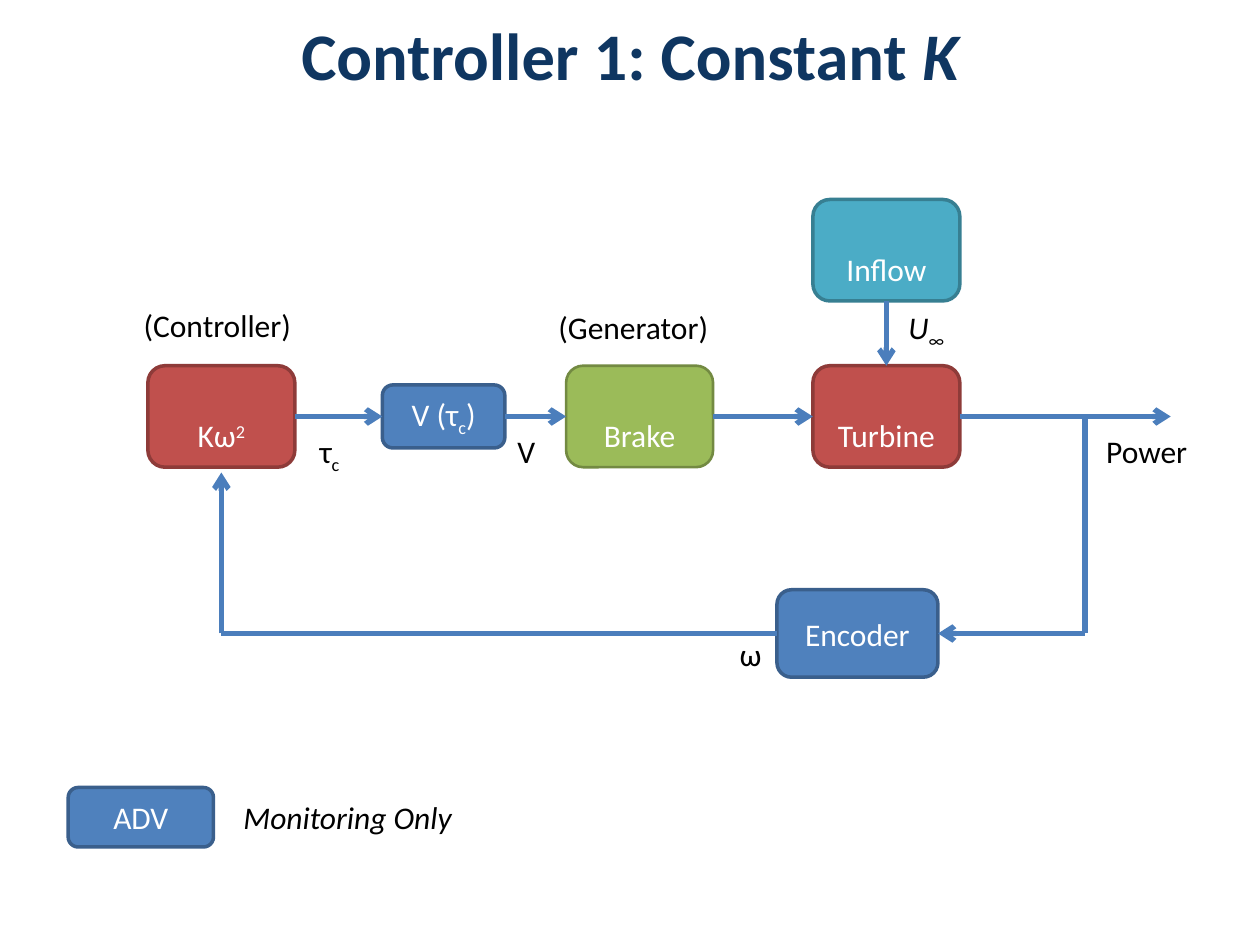
from dataclasses import dataclass

from lxml.etree import SubElement as Sub
from pptx import Presentation
from pptx.dml.color import RGBColor as Rgb
from pptx.enum.shapes import MSO_CONNECTOR as Conn, MSO_SHAPE as Shape
from pptx.enum.text import MSO_ANCHOR as Anchor, MSO_AUTO_SIZE as Fit, PP_ALIGN as Align
from pptx.oxml.ns import qn
from pptx.util import Pt

TOP, LEFT, BOTTOM, RIGHT = range(4)
SHIFT = {"sub": "-25000", "sup": "30000"}


@dataclass(frozen=True)
class Theme:
    """Colours and type sizes; each box tone is a fill and an edge."""
    font: str = "Calibri"
    body: float = 18
    head: float = 38
    navy: str = "0F3661"
    ink: str = "000000"
    pale: str = "FFFFFF"
    wire: str = "4B7EBC"
    red: tuple = ("C0504D", "8E3B39")
    green: tuple = ("9BBB59", "738A42")
    teal: tuple = ("4BACC6", "377F92")
    blue: tuple = ("4F81BD", "3A5F8C")


THEME = Theme()


def write(para, runs, color, size=THEME.body, bold=False):
    """Add (text, style) runs to a paragraph."""
    for text, style in runs:
        run = para.add_run()
        run.text = text
        font = run.font
        font.name, font.size, font.bold = THEME.font, Pt(size), bold
        font.italic = style == "slant"
        font.color.rgb = Rgb.from_string(color)
        if style in SHIFT:
            run._r.get_or_add_rPr().set("baseline", SHIFT[style])


def add_title(slide, runs):
    """Add the heading across the full slide width."""
    frame = slide.shapes.add_textbox(0, Pt(8), Pt(720), Pt(46)).text_frame
    frame.margin_left = frame.margin_right = frame.margin_top = frame.margin_bottom = 0
    frame.word_wrap, frame.auto_size = True, Fit.SHAPE_TO_FIT_TEXT
    para = frame.paragraphs[0]
    para.alignment = Align.CENTER
    write(para, runs, THEME.navy, THEME.head, True)


def add_block(slide, mid, size, tone, runs, lead=None, edge=2):
    """Add a rounded box placed by its centre."""
    (x, y), (w, h) = mid, size
    box = slide.shapes.add_shape(
        Shape.ROUNDED_RECTANGLE, Pt(x - w / 2), Pt(y - h / 2), Pt(w), Pt(h))
    box.shadow.inherit = False
    box.fill.solid()
    box.fill.fore_color.rgb = Rgb.from_string(tone[0])
    box.line.color.rgb = Rgb.from_string(tone[1])
    box.line.width = Pt(edge)
    frame = box.text_frame
    frame.word_wrap, frame.vertical_anchor = True, Anchor.MIDDLE
    para = frame.paragraphs[0]
    para.alignment, para.space_after = Align.CENTER, Pt(10)
    if lead:
        para.line_spacing = lead
    write(para, runs, THEME.pale)
    return box


def add_label(slide, x, y, w, runs, wrap=True, align=Align.LEFT):
    """Add a plain caption."""
    frame = slide.shapes.add_textbox(Pt(x), Pt(y), Pt(w), Pt(29)).text_frame
    frame.word_wrap, frame.auto_size = wrap, Fit.SHAPE_TO_FIT_TEXT
    para = frame.paragraphs[0]
    para.alignment = align
    write(para, runs, THEME.ink)


def add_wire(slide, start, end, arrow=True):
    """Link two ends, each an (x, y) point or a (box, side) joint."""
    wire = slide.shapes.add_connector(Conn.STRAIGHT, 0, 0, 0, 0)
    if isinstance(start[0], (int, float)):
        wire.begin_x, wire.begin_y = map(Pt, start)
    else:
        wire.begin_connect(*start)
    if isinstance(end[0], (int, float)):
        wire.end_x, wire.end_y = map(Pt, end)
    else:
        wire.end_connect(*end)
    wire.line.color.rgb = Rgb.from_string(THEME.wire)
    wire.line.width = Pt(3)
    if arrow:
        Sub(wire.line._get_or_add_ln(), qn("a:tailEnd"), type="arrow")
    Sub(wire._element.spPr, qn("a:effectLst"))


def add_loop(slide):
    """Add the control loop with its boxes and wires."""
    row, back, west, east = 238, 362, 126.5, 620
    big = (84, 58)
    gain = add_block(slide, (west, row), big, THEME.red, [("Kω", ""), ("2", "sup")], 2)
    volt = add_block(slide, (253.5, row), (70, 36), THEME.blue,
                     [("V (τ", ""), ("c", "sub"), (")", "")])
    brake = add_block(slide, (365.5, row), big, THEME.green, [("Brake", "")], 2, 1.5)
    rotor = add_block(slide, (506.5, row), big, THEME.red, [("Turbine", "")], 2)
    flow = add_block(slide, (506.5, 143), big, THEME.teal, [("Inflow", "")], 2)
    coder = add_block(slide, (490, back), (92, 50), THEME.blue, [("Encoder", "")])

    chain = [gain, volt, brake, rotor]
    for one, two in zip(chain, chain[1:]):
        add_wire(slide, (one, RIGHT), (two, LEFT))
    add_wire(slide, (flow, BOTTOM), (rotor, TOP))
    add_wire(slide, (rotor, RIGHT), (669, row))
    add_wire(slide, (east, row), (east, back), False)
    add_wire(slide, (east, back), (coder, RIGHT))
    add_wire(slide, (coder, LEFT), (west, back), False)
    add_wire(slide, (west, back), (west, 270))


def main():
    """Build and save the slide."""
    deck = Presentation()
    deck.slide_width, deck.slide_height = Pt(720), Pt(540)
    slide = deck.slides.add_slide(deck.slide_layouts[6])
    add_title(slide, [("Controller 1: Constant ", ""), ("K", "slant")])
    add_loop(slide)
    add_label(slide, 175.5, 243.5, 42.5, [("τ", ""), ("c", "sub")])
    add_label(slide, 288.5, 243.5, 42.5, [("V", "")])
    add_label(slide, 415.5, 359.5, 42.5, [("ω", "")])
    add_label(slide, 620, 243.5, 70.5, [("Power", "")], align=Align.CENTER)
    add_label(slide, 312, 172.5, 101.5, [("(Generator)", "")], wrap=False)
    add_label(slide, 75, 171.5, 100, [("(Controller)", "")], wrap=False)
    add_label(slide, 512, 172.5, 42.5, [("U", "slant"), ("∞", "sub")])
    add_block(slide, (80.5, 467), (83, 34), THEME.blue, [("ADV", "")])
    add_label(slide, 132, 452.5, 135.5, [("Monitoring Only", "slant")], wrap=False)
    deck.save("out.pptx")


if __name__ == "__main__":
    main()
